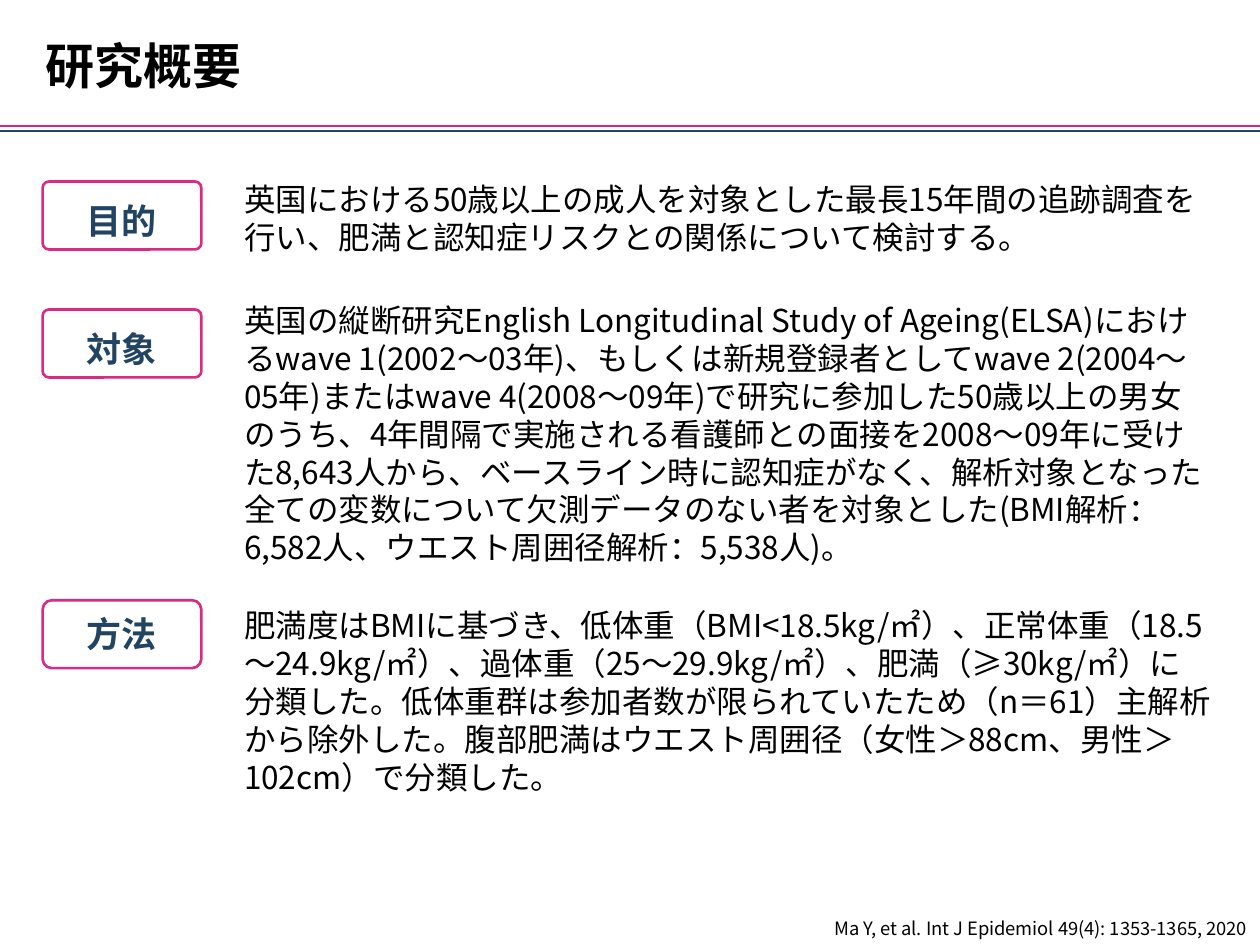
from lxml import etree
from pptx import Presentation
from pptx.dml.color import RGBColor
from pptx.enum.shapes import MSO_CONNECTOR, MSO_SHAPE
from pptx.enum.text import MSO_ANCHOR, MSO_AUTO_SIZE, PP_ALIGN
from pptx.oxml.ns import qn
from pptx.util import Cm, Pt

STRAIGHT = MSO_CONNECTOR.STRAIGHT
ROUNDED = MSO_SHAPE.ROUNDED_RECTANGLE
LEFT, CENTER, RIGHT = PP_ALIGN.LEFT, PP_ALIGN.CENTER, PP_ALIGN.RIGHT
TOP, MIDDLE, BOTTOM = MSO_ANCHOR.TOP, MSO_ANCHOR.MIDDLE, MSO_ANCHOR.BOTTOM
NO_FIT = MSO_AUTO_SIZE.NONE

FONT = "Noto Sans CJK JP"
COLORS = {"text": "000000", "navy": "224463", "pink": "D82B83"}


def write_text(shape, text, size, color="text", bold=False, align=LEFT, anchor=TOP):
    frame = shape.text_frame
    frame.auto_size = NO_FIT
    frame.word_wrap = True
    frame.vertical_anchor = anchor
    frame.text = text
    paragraph = frame.paragraphs[0]
    paragraph.alignment = align
    font = paragraph.font
    font.size = Pt(size)
    font.bold = bold
    font.name = FONT
    font.color.rgb = RGBColor.from_string(COLORS[color])
    properties = paragraph._p.pPr.find(qn("a:defRPr"))
    etree.SubElement(properties, qn("a:ea"), typeface=FONT)
    return paragraph


presentation = Presentation()
presentation.slide_width = Cm(25.4)
presentation.slide_height = Cm(19.05)
slide = presentation.slides.add_slide(presentation.slide_layouts[5])

for y, color in [(2.64, "navy"), (2.54, "pink")]:
    rule = slide.shapes.add_connector(STRAIGHT, Cm(0), Cm(y), Cm(25.4), Cm(y))
    rule.line.color.rgb = RGBColor.from_string(COLORS[color])
    rule.line.width = Pt(1.5)
    etree.SubElement(rule._element.spPr, qn("a:effectLst"))

title = slide.shapes.title
title.left, title.top, title.width, title.height = Cm(0.66), Cm(0.58), Cm(4.5), Cm(1.45)
write_text(title, "研究概要", 28, bold=True, anchor=MIDDLE)
title.text_frame.word_wrap = False

sections = [
    ("目的", 3.66, 0.06, 1.2, 0.093, 3.5, 1.8,
     "英国における50歳以上の成人を対象とした最長15年間の追跡調査を行い、"
     "肥満と認知症リスクとの関係について検討する。"),
    ("対象", 6.24, 0.06, 1.2, 0.093, 5.95, 5.64,
     "英国の縦断研究English Longitudinal Study of Ageing(ELSA)における"
     "wave 1(2002～03年)、もしくは新規登録者としてwave 2(2004～05年)または"
     "wave 4(2008～09年)で研究に参加した50歳以上の男女のうち、"
     "4年間隔で実施される看護師との面接を2008～09年に受けた8,643人から、"
     "ベースライン時に認知症がなく、解析対象となった全ての変数について"
     "欠測データのない者を対象とした(BMI解析：6,582人、ウエスト周囲径解析：5,538人)。"),
    ("方法", 12.1, 0.12, 1.0, 0.136, 12.1, 4.11,
     "肥満度はBMIに基づき、低体重（BMI<18.5kg/㎡）、正常体重（18.5～24.9kg/㎡）、"
     "過体重（25～29.9kg/㎡）、肥満（≥30kg/㎡）に分類した。"
     "低体重群は参加者数が限られていたため（n＝61）主解析から除外した。"
     "腹部肥満はウエスト周囲径（女性＞88cm、男性＞102cm）で分類した。"),
]

for label, top, offset, spacing, rounding, body_top, body_height, body in sections:
    group = slide.shapes.add_group_shape()
    frame = group.shapes.add_shape(ROUNDED, Cm(0.86), Cm(top), Cm(3.2), Cm(1.37))
    frame.adjustments[0] = rounding
    frame.shadow.inherit = False
    frame.fill.background()
    frame.line.color.rgb = RGBColor.from_string(COLORS["pink"])
    frame.line.width = Pt(1.5)
    label_box = group.shapes.add_textbox(Cm(1.47), Cm(top + offset), Cm(1.98), Cm(1.15))
    paragraph = write_text(label_box, label, 20, "navy", bold=True, align=CENTER)
    paragraph.line_spacing = spacing

    body_box = slide.shapes.add_textbox(Cm(4.67), Cm(body_top), Cm(19.99), Cm(body_height))
    write_text(body_box, body, 18)

citation = slide.shapes.add_textbox(Cm(11.86), Cm(18.31), Cm(13.54), Cm(0.74))
write_text(citation, "Ma Y, et al. Int J Epidemiol 49(4): 1353-1365, 2020", 10.5,
           align=RIGHT, anchor=BOTTOM)

presentation.save("out.pptx")
